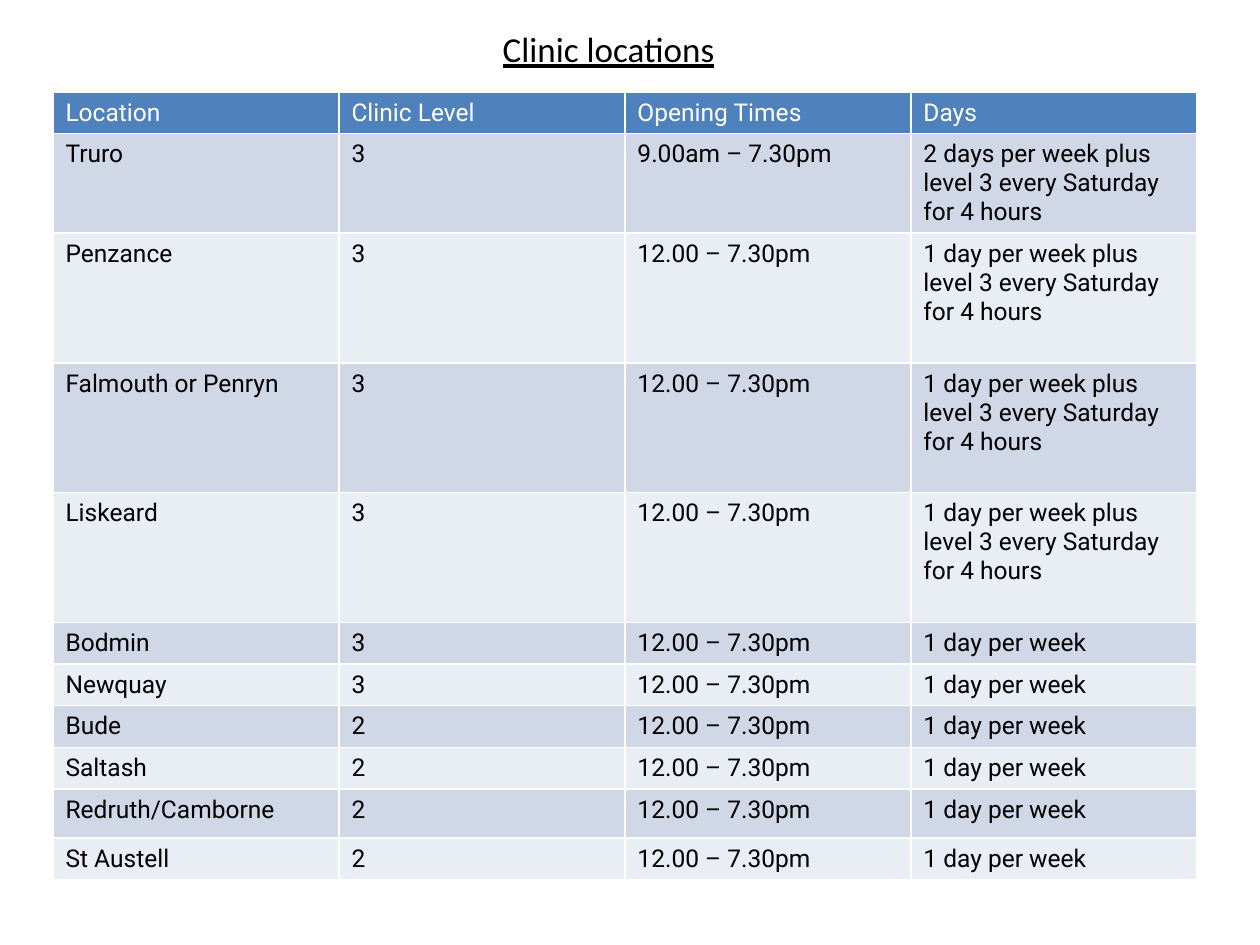
from pptx import Presentation
from pptx.dml.color import RGBColor
from pptx.enum.text import MSO_ANCHOR, PP_ALIGN
from pptx.util import Inches, Pt

CENTER = PP_ALIGN.CENTER
MIDDLE = MSO_ANCHOR.MIDDLE
TITLE_ONLY = 5


def color(hex_value):
    return RGBColor.from_string(hex_value)


def style_font(font, name, size, hex_value):
    font.name = name
    font.size = Pt(size)
    font.bold = False
    font.color.rgb = color(hex_value)


prs = Presentation()
prs.slide_width, prs.slide_height = Inches(10), Inches(7.5)
slide = prs.slides.add_slide(prs.slide_layouts[TITLE_ONLY])

# Title
title = slide.shapes.title
title.left, title.top = Inches(0.43), Inches(0.16)
title.width, title.height = Inches(8.8), Inches(0.45)
title.text_frame.text = "Clinic locations"
title.text_frame.vertical_anchor = MIDDLE
heading = title.text_frame.paragraphs[0]
heading.alignment = CENTER
style_font(heading.font, "Calibri", 20, "000000")
heading.font.underline = True

# Clinics: location, level, opening times, days, row height
AFTERNOON = "12.00 – 7.30pm"
WEEKLY = "1 day per week"
SATURDAY = " plus level 3 every Saturday for 4 hours"
rows = [
    ("Location", "Clinic Level", "Opening Times", "Days", 0.32),
    ("Truro", "3", "9.00am – 7.30pm", "2 days per week" + SATURDAY, 0.79),
    ("Penzance", "3", AFTERNOON, WEEKLY + SATURDAY, 1.03),
    ("Falmouth or Penryn", "3", AFTERNOON, WEEKLY + SATURDAY, 1.03),
    ("Liskeard", "3", AFTERNOON, WEEKLY + SATURDAY, 1.03),
    ("Bodmin", "3", AFTERNOON, WEEKLY, 0.33),
    ("Newquay", "3", AFTERNOON, WEEKLY, 0.33),
    ("Bude", "2", AFTERNOON, WEEKLY, 0.33),
    ("Saltash", "2", AFTERNOON, WEEKLY, 0.33),
    ("Redruth/Camborne", "2", AFTERNOON, WEEKLY, 0.39),
    ("St Austell", "2", AFTERNOON, WEEKLY, 0.33),
]

# Table; the default table style supplies the white rules
table_height = sum(row[-1] for row in rows)
clinics = slide.shapes.add_table(
    len(rows), 4, Inches(0.42), Inches(0.73), Inches(9.08), Inches(table_height)
).table

for r, (*texts, height) in enumerate(rows):
    clinics.rows[r].height = Inches(height)
    if r == 0:
        fill, ink = "4F81BD", "FFFFFF"
    else:
        fill, ink = ("D0D8E8" if r % 2 else "E9EDF4"), "000000"
    for c, text in enumerate(texts):
        cell = clinics.cell(r, c)
        cell.text = text
        cell.fill.solid()
        cell.fill.fore_color.rgb = color(fill)
        style_font(cell.text_frame.paragraphs[0].font, "Roboto", 14, ink)

prs.save("out.pptx")
